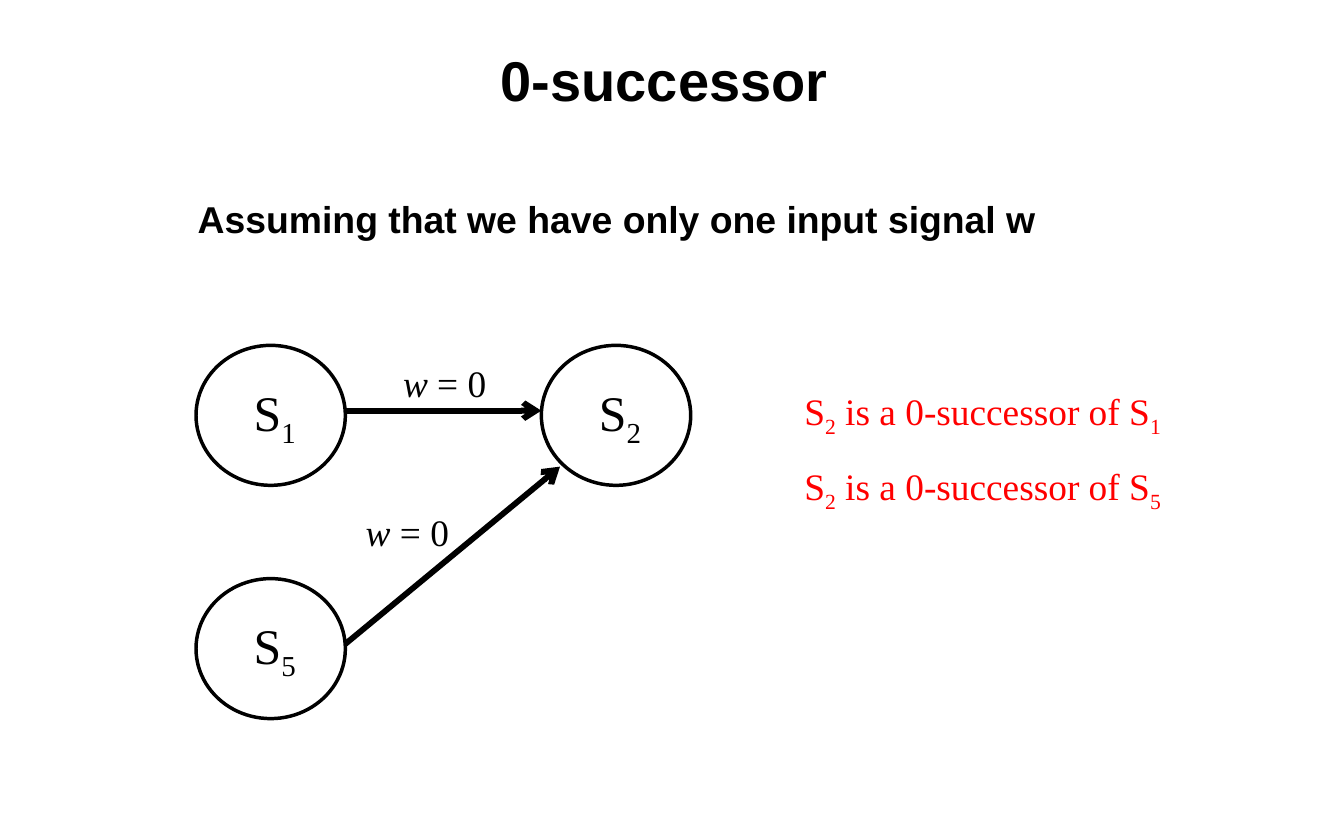
from dataclasses import dataclass
from typing import NamedTuple

from lxml import etree
from pptx import Presentation
from pptx.dml.color import RGBColor
from pptx.enum.shapes import MSO_CONNECTOR, MSO_SHAPE
from pptx.enum.text import MSO_ANCHOR, PP_ALIGN
from pptx.oxml.ns import qn
from pptx.util import Inches, Pt

OVAL = MSO_SHAPE.OVAL
STRAIGHT = MSO_CONNECTOR.STRAIGHT
LEFT, CENTER = PP_ALIGN.LEFT, PP_ALIGN.CENTER
TOP, MIDDLE = MSO_ANCHOR.TOP, MSO_ANCHOR.MIDDLE

WIDTH, HEIGHT = 12, 7.5
CELLS_PER_INCH = 12
NODE_COLS, NODE_ROWS = 16, 15
SERIF, SANS = "Times New Roman", "Arial"
BLACK, WHITE, RED = "000000", "FFFFFF", "FF0000"


class Run(NamedTuple):
    text: str
    sub: bool = False
    italic: bool = False


@dataclass
class Node:
    number: str
    col: float
    row: float


@dataclass
class Edge:
    start: tuple
    end: tuple
    label_at: tuple


@dataclass
class Note:
    source: str
    row: float
    cols: float


NODES = [Node("1", 21, 37), Node("2", 58, 37), Node("5", 21, 62)]
EDGES = [
    Edge((37, 44), (58, 44), (42, 38)),
    Edge((37, 69), (60, 50), (38, 54)),
]
NOTES = [Note("1", 41, 42.7), Note("5", 49, 42.7)]


def grid(*cells: float) -> list:
    return [Inches(cell / CELLS_PER_INCH) for cell in cells]


def color(value: str) -> RGBColor:
    return RGBColor.from_string(value)


def write(tf, runs, *, size=24, font=SERIF, fill=BLACK, bold=False,
          align=LEFT, anchor=TOP, wrap=False) -> None:
    tf.word_wrap = wrap
    tf.vertical_anchor = anchor
    p = tf.paragraphs[0]
    p.alignment = align
    for run in runs:
        r = p.add_run()
        r.text = run.text
        r.font.name = font
        r.font.size = Pt(size)
        r.font.bold = bold
        r.font.italic = run.italic
        r.font.color.rgb = color(fill)
        if run.sub:
            r._r.get_or_add_rPr().set("baseline", "-25000")


def add_text(s, box: tuple, runs, **style) -> None:
    write(s.shapes.add_textbox(*grid(*box)).text_frame, runs, **style)


def add_node(s, node: Node) -> None:
    sp = s.shapes.add_shape(
        OVAL, *grid(node.col, node.row, NODE_COLS, NODE_ROWS))
    sp.shadow.inherit = False
    sp.fill.solid()
    sp.fill.fore_color.rgb = color(WHITE)
    sp.line.color.rgb = color(BLACK)
    sp.line.width = Pt(2.25)
    tf = sp.text_frame
    tf.margin_left = Inches(0.07)
    tf.margin_right = tf.margin_top = tf.margin_bottom = 0
    write(tf, [Run("S"), Run(node.number, sub=True)],
          size=32, align=CENTER, anchor=MIDDLE)


def add_edge(s, edge: Edge) -> None:
    line = s.shapes.add_connector(STRAIGHT, *grid(*edge.start, *edge.end))
    line.line.color.rgb = color(BLACK)
    line.line.width = Pt(3.75)
    etree.SubElement(line.line._get_or_add_ln(), qn("a:tailEnd"), type="arrow")
    etree.SubElement(line._element.spPr, qn("a:effectLst"))
    add_text(s, (*edge.label_at, 11.75, 6),
             [Run("w", italic=True), Run(" = 0")])


def add_note(s, note: Note) -> None:
    runs = [Run("S"), Run("2", sub=True),
            Run(" is a 0-successor of S"), Run(note.source, sub=True)]
    add_text(s, (85, note.row, note.cols, 6), runs, fill=RED)


def main() -> None:
    prs = Presentation()
    prs.slide_width, prs.slide_height = Inches(WIDTH), Inches(HEIGHT)
    s = prs.slides.add_slide(prs.slide_layouts[6])
    add_text(s, (0, 4, 144, 9), [Run("0-successor ")], size=36, font=SANS,
             bold=True, align=CENTER, anchor=MIDDLE, wrap=True)
    add_text(s, (20, 20.4, 104, 8),
             [Run("Assuming that we have only one input signal w")],
             font=SANS, bold=True, wrap=True)
    for node in NODES:
        add_node(s, node)
    for edge in EDGES:
        add_edge(s, edge)
    for note in NOTES:
        add_note(s, note)
    prs.save("out.pptx")


if __name__ == "__main__":
    main()
